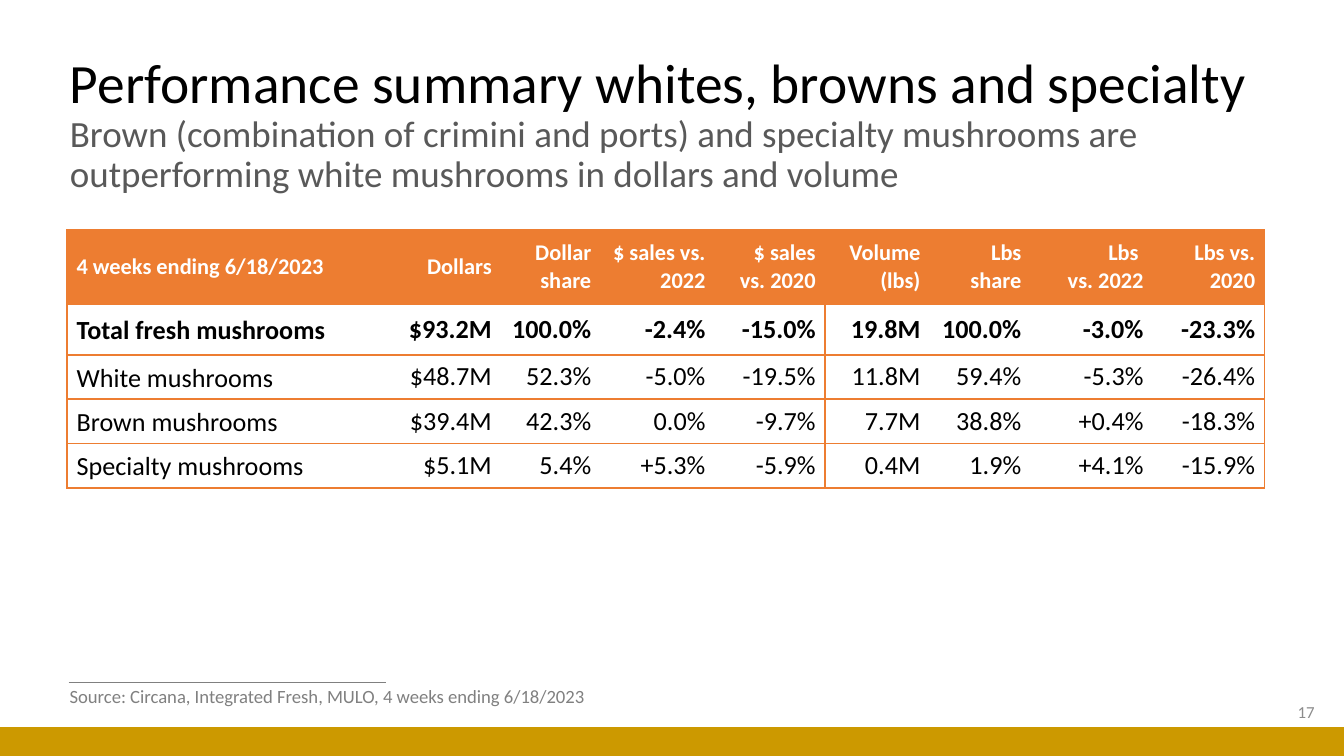
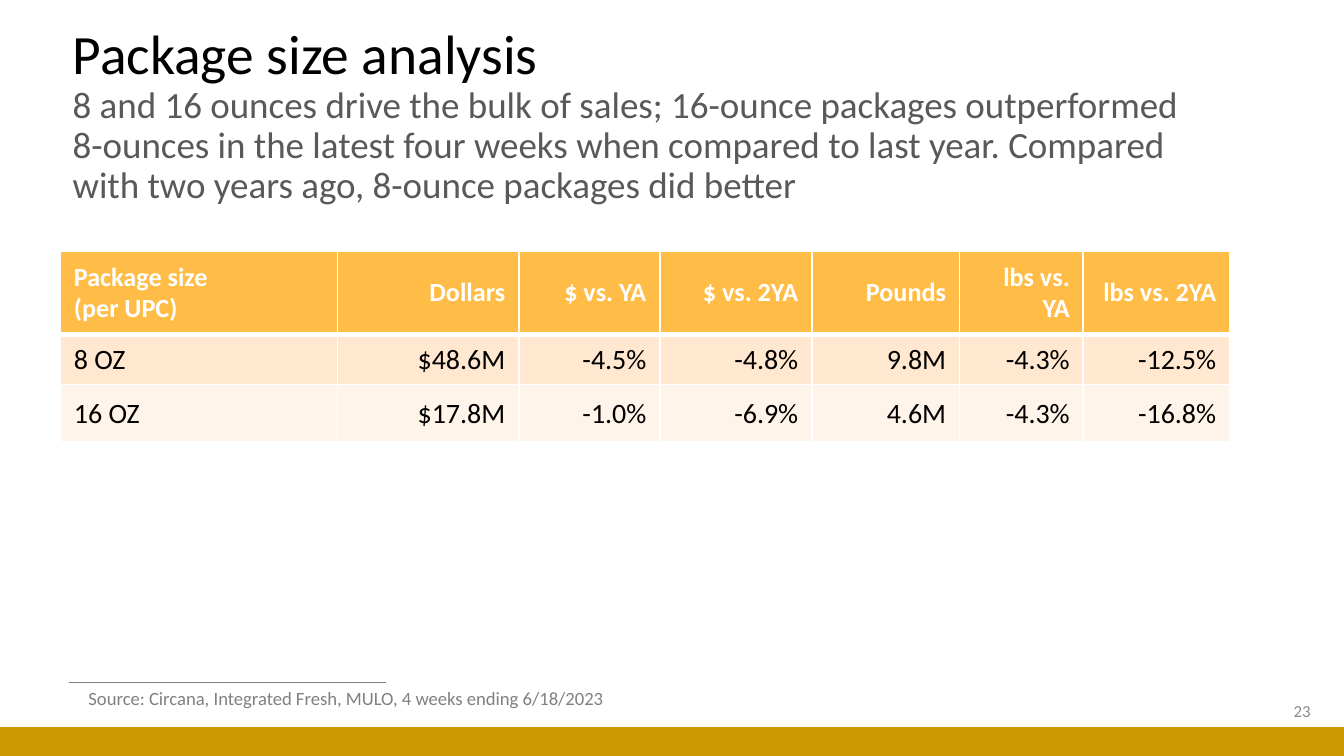
"""Build two mushroom sales slides, each with a title, a table and a source line."""
from copy import deepcopy

from lxml.etree import SubElement
from pptx import Presentation
from pptx.dml.color import RGBColor
from pptx.enum.shapes import MSO_CONNECTOR, MSO_SHAPE
from pptx.enum.text import MSO_ANCHOR, MSO_AUTO_SIZE, PP_ALIGN
from pptx.oxml.ns import qn
from pptx.util import Inches, Pt

BLACK = RGBColor(0x00, 0x00, 0x00)
WHITE = RGBColor(0xFF, 0xFF, 0xFF)
DARK_GRAY = RGBColor(0x59, 0x59, 0x59)
GRAY = RGBColor(0x80, 0x80, 0x80)
LIGHT_GRAY = RGBColor(0x8C, 0x8C, 0x8C)
GOLD = RGBColor(0xCC, 0x99, 0x00)
ORANGE = RGBColor(0xED, 0x7D, 0x31)
AMBER = RGBColor(0xFF, 0xBD, 0x47)
PEACH = RGBColor(0xFF, 0xE8, 0xCF)
CREAM = RGBColor(0xFF, 0xF4, 0xE9)

SLIDE_WIDTH = Inches(10)
SLIDE_HEIGHT = SLIDE_WIDTH * 9 // 16
FONT = "Calibri"
SOURCE = "Source: Circana, Integrated Fresh, MULO, 4 weeks ending 6/18/2023"
TITLE_FORMAT = {"name": FONT, "size": Pt(29.7), "color": BLACK}
SUBTITLE_FORMAT = {"name": FONT, "size": Pt(19.8), "color": DARK_GRAY}
SOURCE_FORMAT = {"name": FONT, "size": Pt(10), "color": GRAY}
NUMBER_FORMAT = {"name": FONT, "size": Pt(9), "color": LIGHT_GRAY}


def type_borders(row, column):
    """Return the widths that frame the dollar and volume halves."""
    return {"L": 1 if column in (0, 5) else 0, "R": 1 if column in (4, 8) else 0, "T": 1, "B": 1}


def package_borders(row, column):
    """Return a thin grid with a heavy rule under the header."""
    return {"L": 1, "R": 1, "T": 3 if row == 1 else 1, "B": 3 if row == 0 else 1}


SLIDES = [
    {
        "title": "Performance summary whites, browns and specialty",
        "subtitle": "Brown (combination of crimini and ports) and specialty mushrooms are "
                    "outperforming white mushrooms in dollars and volume",
        "title_box": (0.42, 0.54, 9.37, 0.79),
        "number": "17", "number_box": (7.63, 5.15, 2.25, 0.3),
        "source_box": (0.42, 5.05, 4.13, 0.27),
        "table": {
            "origin": (0.5, 1.71),
            "columns": (2.37, 0.86, 0.74, 0.85, 0.82, 0.78, 0.75, 0.91, 0.83),
            "heights": (0.55, 0.38, 0.33, 0.33, 0.33),
            "rows": [
                ("4 weeks ending 6/18/2023", "Dollars", "Dollar share", "$ sales vs. 2022",
                 "$ sales vs. 2020", "Volume (lbs)", "Lbs\nshare", "Lbs \vvs. 2022", "Lbs vs. 2020"),
                ("Total fresh mushrooms", "$93.2M", "100.0%", "-2.4%", "-15.0%",
                 "19.8M", "100.0%", "-3.0%", "-23.3%"),
                ("White mushrooms", "$48.7M", "52.3%", "-5.0%", "-19.5%",
                 "11.8M", "59.4%", "-5.3%", "-26.4%"),
                ("Brown mushrooms", "$39.4M", "42.3%", "0.0%", "-9.7%",
                 "7.7M", "38.8%", "+0.4%", "-18.3%"),
                ("Specialty mushrooms", "$5.1M", "5.4%", "+5.3%", "-5.9%",
                 "0.4M", "1.9%", "+4.1%", "-15.9%"),
            ],
            "fills": (ORANGE, None, None, None, None),
            "sizes": (12, 14), "bold_rows": 2, "label_spacing": 1.07,
            "header_margins": (0.07, 0, 0.07, 0), "body_margins": (0.07, 0, 0.07, 0),
            "borders": type_borders, "border_color": ORANGE,
        },
    },
    {
        "title": "Package size analysis",
        "subtitle": "8 and 16 ounces drive the bulk of sales; 16-ounce packages outperformed "
                    "8-ounces in the latest four weeks when compared to last year. Compared "
                    "with two years ago, 8-ounce packages did better",
        "title_box": (0.44, 0.34, 8.53, 1.06),
        "number": "23", "number_box": (7.6, 5.14, 2.25, 0.3),
        "source_box": (0.56, 5.06, 4.12, 0.27),
        "table": {
            "origin": (0.45, 1.87),
            "columns": (2.06, 1.35, 1.05, 1.13, 1.1, 0.92, 1.09),
            "heights": (0.62, 0.37, 0.43),
            "rows": [
                ("Package size \v(per UPC)", "Dollars", "$ vs. YA", "$ vs. 2YA",
                 "Pounds", "lbs vs. YA", "lbs vs. 2YA"),
                ("8 OZ", "$48.6M", "-4.5%", "-4.8%", "9.8M", "-4.3%", "-12.5%"),
                ("16 OZ", "$17.8M", "-1.0%", "-6.9%", "4.6M", "-4.3%", "-16.8%"),
            ],
            "fills": (AMBER, PEACH, CREAM),
            "sizes": (14, 15), "bold_rows": 1, "label_spacing": 1.0,
            "header_margins": (0.1, 0.05, 0.1, 0.05), "body_margins": (0.1, 0.01, 0.1, 0),
            "borders": package_borders, "border_color": WHITE,
        },
    },
]


def inches(values):
    """Convert numbers to lengths."""
    return [Inches(value) for value in values]


def format_font(font, formats):
    """Apply a dict of font values."""
    for name, value in formats.items():
        if name == "color":
            font.color.rgb = value
        else:
            setattr(font, name, value)


def format_breaks(paragraph):
    """Give line breaks the format of the first run."""
    for line_break in paragraph._p.findall(qn("a:br")):
        line_break.append(deepcopy(paragraph.runs[0]._r.rPr))


def add_title(slide, content):
    """Fill the title placeholder with a heading and a subtitle."""
    title = slide.shapes.title
    title.left, title.top, title.width, title.height = inches(content["title_box"])
    frame = title.text_frame
    frame.auto_size = MSO_AUTO_SIZE.NONE
    frame.vertical_anchor = MSO_ANCHOR.MIDDLE
    paragraph = frame.paragraphs[0]
    paragraph.text = content["title"] + "\v" + content["subtitle"]
    paragraph.alignment = PP_ALIGN.LEFT
    paragraph.line_spacing = 0.9
    for run, formats in zip(paragraph.runs, (TITLE_FORMAT, SUBTITLE_FORMAT)):
        format_font(run.font, formats)
    format_breaks(paragraph)


def add_label(slide, text, box, formats, alignment, anchor, wrap):
    """Add a one-line text box."""
    frame = slide.shapes.add_textbox(*inches(box)).text_frame
    frame.word_wrap = wrap
    frame.auto_size = MSO_AUTO_SIZE.NONE if wrap else MSO_AUTO_SIZE.SHAPE_TO_FIT_TEXT
    frame.vertical_anchor = anchor
    paragraph = frame.paragraphs[0]
    paragraph.alignment = alignment
    run = paragraph.add_run()
    run.text = text
    format_font(run.font, formats)


def add_footer(slide, content):
    """Add the rule, the gold band, the page number and the source."""
    rule = slide.shapes.add_connector(MSO_CONNECTOR.STRAIGHT, *inches((0.51, 5.08, 2.87, 5.08)))
    rule.line.color.rgb = GRAY
    rule.line.width = Pt(0.5)
    SubElement(rule._element.spPr, qn("a:effectLst"))
    band_top = Inches(5.41)
    band = slide.shapes.add_shape(MSO_SHAPE.RECTANGLE, 0, band_top, SLIDE_WIDTH,
                                  SLIDE_HEIGHT - band_top)
    band.shadow.inherit = False
    band.fill.solid()
    band.fill.fore_color.rgb = GOLD
    band.line.fill.background()
    add_label(slide, content["number"], content["number_box"], NUMBER_FORMAT,
              PP_ALIGN.RIGHT, MSO_ANCHOR.MIDDLE, True)
    add_label(slide, SOURCE, content["source_box"], SOURCE_FORMAT,
              PP_ALIGN.LEFT, MSO_ANCHOR.TOP, False)


def set_borders(cell, widths, color):
    """Draw the sides of a cell, with width 0 for none."""
    properties = cell._tc.get_or_add_tcPr()
    for side, width in widths.items():
        line = SubElement(properties, qn(f"a:ln{side}"), w=str(Pt(width)))
        if width:
            fill = SubElement(line, qn("a:solidFill"))
            SubElement(fill, qn("a:srgbClr"), val=str(color))
        else:
            SubElement(line, qn("a:noFill"))


def fill_cell(cell, text, row, column, design):
    """Write and format one table cell."""
    header = row == 0
    set_borders(cell, design["borders"](row, column), design["border_color"])
    color = design["fills"][row]
    if color is None:
        cell.fill.background()
    else:
        cell.fill.solid()
        cell.fill.fore_color.rgb = color
    margins = inches(design["header_margins" if header else "body_margins"])
    for side, margin in zip(("left", "top", "right", "bottom"), margins):
        setattr(cell, f"margin_{side}", margin)
    cell.vertical_anchor = MSO_ANCHOR.MIDDLE
    cell.text = text
    formats = {
        "name": FONT,
        "size": Pt(design["sizes"][0 if header else 1]),
        "bold": row < design["bold_rows"],
        "color": WHITE if header else BLACK,
    }
    for paragraph in cell.text_frame.paragraphs:
        paragraph.alignment = PP_ALIGN.RIGHT if column else PP_ALIGN.LEFT
        if column == 0 and not header:
            paragraph.line_spacing = design["label_spacing"]
        for run in paragraph.runs:
            format_font(run.font, formats)
        format_breaks(paragraph)


def add_sales_table(slide, design):
    """Add a table from its rows and measures."""
    columns, heights = design["columns"], design["heights"]
    box = (*design["origin"], sum(columns), sum(heights))
    table = slide.shapes.add_table(len(heights), len(columns), *inches(box)).table
    table.first_row = table.horz_banding = False
    for column, width in zip(table.columns, inches(columns)):
        column.width = width
    for row, height in zip(table.rows, inches(heights)):
        row.height = height
    for row, texts in enumerate(design["rows"]):
        for column, text in enumerate(texts):
            fill_cell(table.cell(row, column), text, row, column, design)


def main():
    """Build and save the presentation."""
    presentation = Presentation()
    presentation.slide_width, presentation.slide_height = SLIDE_WIDTH, SLIDE_HEIGHT
    for content in SLIDES:
        slide = presentation.slides.add_slide(presentation.slide_layouts[5])
        add_title(slide, content)
        add_footer(slide, content)
        add_sales_table(slide, content["table"])
    presentation.save("out.pptx")


if __name__ == "__main__":
    main()
